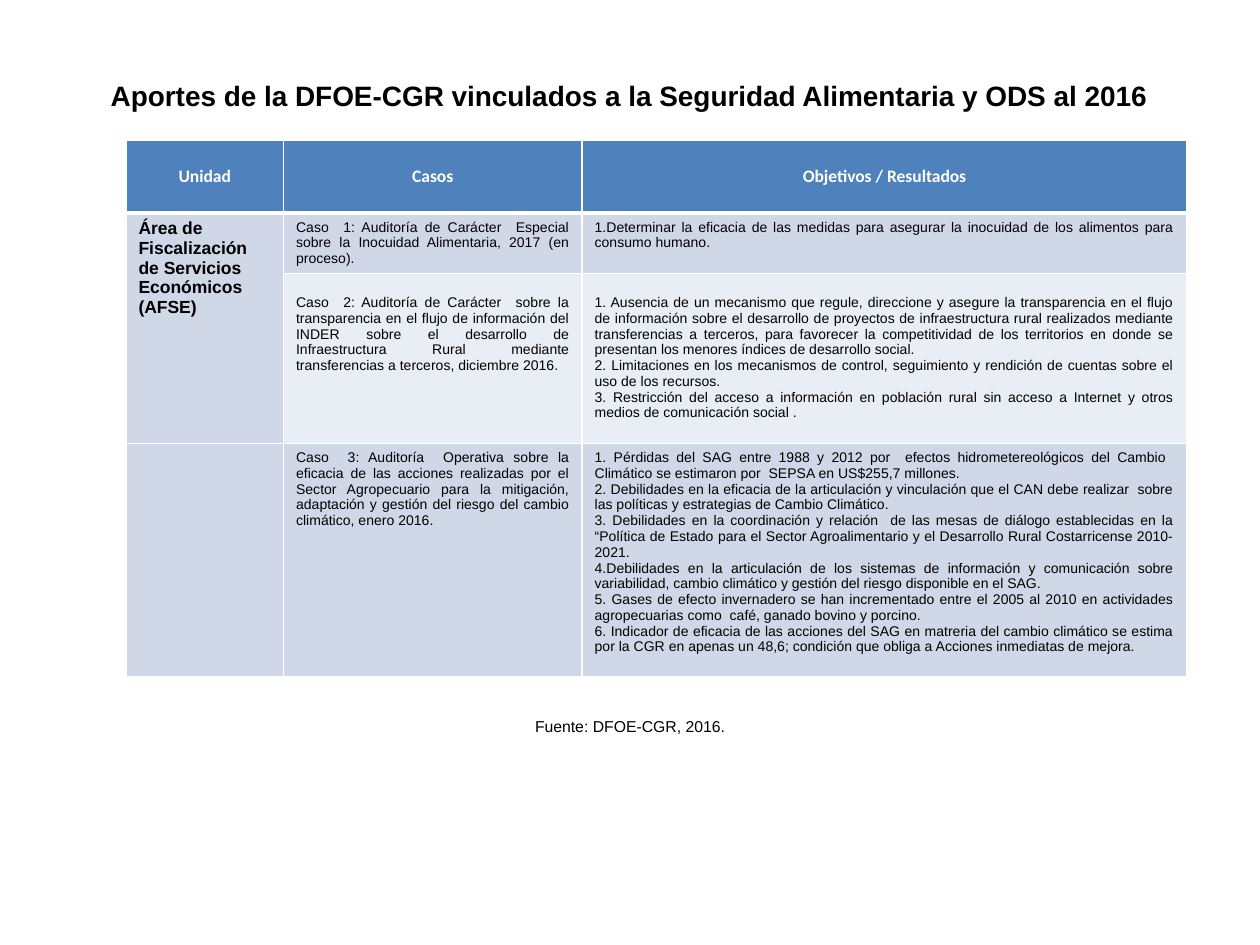
from pptx import Presentation
from pptx.dml.color import RGBColor
from pptx.enum.text import MSO_ANCHOR, PP_ALIGN
from pptx.oxml.ns import qn
from pptx.util import Inches, Pt
from lxml import etree

CENTER, LEFT, JUSTIFY = PP_ALIGN.CENTER, PP_ALIGN.LEFT, PP_ALIGN.JUSTIFY
MIDDLE, TOP = MSO_ANCHOR.MIDDLE, MSO_ANCHOR.TOP

BLACK = RGBColor(0x00, 0x00, 0x00)
WHITE = RGBColor(0xFF, 0xFF, 0xFF)
BLUE = RGBColor(0x4F, 0x81, 0xBD)
BAND_DARK = RGBColor(0xD0, 0xD8, 0xE8)
BAND_LIGHT = RGBColor(0xE9, 0xED, 0xF4)

COLUMN_WIDTHS = [1.25, 2.37, 4.8]
ROW_HEIGHTS = [0.58, 0.48, 1.35, 1.85]
ROW_FILLS = [BLUE, BAND_DARK, BAND_LIGHT, BAND_DARK]

HEADINGS = ["Unidad", "Casos", "Objetivos / Resultados"]
UNIT = "Área de Fiscalización de Servicios Económicos (AFSE)"
CASES = [
    (
        "Caso  1: Auditoría de Carácter  Especial sobre la Inocuidad Alimentaria, 2017 (en proceso).",
        ["1.Determinar la eficacia de las medidas para asegurar la inocuidad de los alimentos para consumo humano."],
        0.05,
    ),
    (
        "Caso  2: Auditoría de Carácter  sobre la transparencia en el flujo de información del INDER "
        "sobre el desarrollo de Infraestructura Rural mediante transferencias a terceros, diciembre 2016.",
        [
            "1. Ausencia de un mecanismo que regule, direccione y asegure la transparencia en el flujo de "
            "información sobre el desarrollo de proyectos de infraestructura rural realizados mediante "
            "transferencias a terceros, para favorecer la competitividad de los territorios en donde se "
            "presentan los menores índices de desarrollo social.",
            "2. Limitaciones en los mecanismos de control, seguimiento y rendición de cuentas sobre el uso "
            "de los recursos.",
            "3. Restricción del acceso a información en población rural sin acceso a Internet y otros medios "
            "de comunicación social .",
        ],
        0.17,
    ),
    (
        "Caso  3: Auditoría  Operativa sobre la eficacia de las acciones realizadas por el Sector "
        "Agropecuario para la mitigación, adaptación y gestión del riesgo del cambio climático, enero 2016.",
        [
            "1. Pérdidas del SAG entre 1988 y 2012 por  efectos hidrometereológicos del Cambio  Climático se "
            "estimaron por  SEPSA en US$255,7 millones.",
            "2. Debilidades en la eficacia de la articulación y vinculación que el CAN debe realizar  sobre "
            "las políticas y estrategias de Cambio Climático.",
            "3. Debilidades en la coordinación y relación  de las mesas de diálogo establecidas en la "
            "“Política de Estado para el Sector Agroalimentario y el Desarrollo Rural Costarricense 2010-2021.",
            "4.Debilidades en la articulación de los sistemas de información y comunicación sobre "
            "variabilidad, cambio climático y gestión del riesgo disponible en el SAG.",
            "5. Gases de efecto invernadero se han incrementado entre el 2005 al 2010 en actividades "
            "agropecuarias como  café, ganado bovino y porcino.",
            "6. Indicador de eficacia de las acciones del SAG en matreria del cambio climático se estima por "
            "la CGR en apenas un 48,6; condición que obliga a Acciones inmediatas de mejora.",
        ],
        0.05,
    ),
]


def write_text(frame, lines, font="Arial", size=8, bold=False, color=BLACK, align=JUSTIFY):
    for index, line in enumerate(lines):
        para = frame.add_paragraph() if index else frame.paragraphs[0]
        para.alignment = align
        span = para.add_run()
        span.text = line
        span.font.name = font
        span.font.size = Pt(size)
        span.font.bold = bold
        span.font.color.rgb = color


def set_borders(cell, color, bottom):
    properties = cell._tc.get_or_add_tcPr()
    for index, (side, width) in enumerate([("L", 1), ("R", 1), ("T", 1), ("B", bottom)]):
        line = etree.Element(qn(f"a:ln{side}"), w=str(Pt(width)))
        fill = etree.SubElement(line, qn("a:solidFill"))
        etree.SubElement(fill, qn("a:srgbClr"), val=str(color))
        properties.insert(index, line)


class SlideBuilder:
    def __init__(self, page):
        self.page = page

    def title(self, text, left, top, width, height):
        box = self.page.shapes.title
        box.left, box.top, box.width, box.height = map(Inches, (left, top, width, height))
        box.text_frame.vertical_anchor = MIDDLE
        write_text(box.text_frame, [text], size=16, bold=True, align=CENTER)

    def table(self, left, top, widths, heights, fills):
        frame = self.page.shapes.add_table(
            len(heights), len(widths), Inches(left), Inches(top),
            Inches(sum(widths)), Inches(sum(heights)),
        )
        table = frame.table
        for column, width in zip(table.columns, widths):
            column.width = Inches(width)
        for index, (row, height, color) in enumerate(zip(table.rows, heights, fills)):
            row.height = Inches(height)
            for cell in row.cells:
                cell.fill.solid()
                cell.fill.fore_color.rgb = color
                set_borders(cell, WHITE, 1 if index else 3)
        return table

    def cell(self, cell, lines, anchor=TOP, margin_top=0.05, **style):
        cell.vertical_anchor = anchor
        cell.margin_top = Inches(margin_top)
        write_text(cell.text_frame, lines, **style)

    def caption(self, text, left, top, width, height):
        box = self.page.shapes.add_textbox(*map(Inches, (left, top, width, height)))
        box.text_frame.word_wrap = False
        write_text(box.text_frame, [text], size=9, align=CENTER)


def main():
    deck = Presentation()
    deck.slide_width, deck.slide_height = Inches(10), Inches(7.5)
    builder = SlideBuilder(deck.slides.add_slide(deck.slide_layouts[5]))

    builder.title("Aportes de la DFOE-CGR vinculados a la Seguridad Alimentaria y ODS al 2016",
                  0.33, 0.51, 9.33, 0.49)

    table = builder.table(1, 1.11, COLUMN_WIDTHS, ROW_HEIGHTS, ROW_FILLS)
    for column, heading in enumerate(HEADINGS):
        builder.cell(table.cell(0, column), [heading], anchor=MIDDLE, font="Calibri",
                     size=10, bold=True, color=WHITE, align=CENTER)
    table.cell(1, 0).merge(table.cell(2, 0))
    builder.cell(table.cell(1, 0), [UNIT], size=10, bold=True, align=LEFT)
    for row, (case, results, margin_top) in enumerate(CASES, start=1):
        builder.cell(table.cell(row, 1), [case], margin_top=margin_top)
        builder.cell(table.cell(row, 2), results, margin_top=margin_top)

    builder.caption("Fuente: DFOE-CGR, 2016.", 4.12, 5.64, 1.76, 0.25)
    deck.save("out.pptx")


if __name__ == "__main__":
    main()
